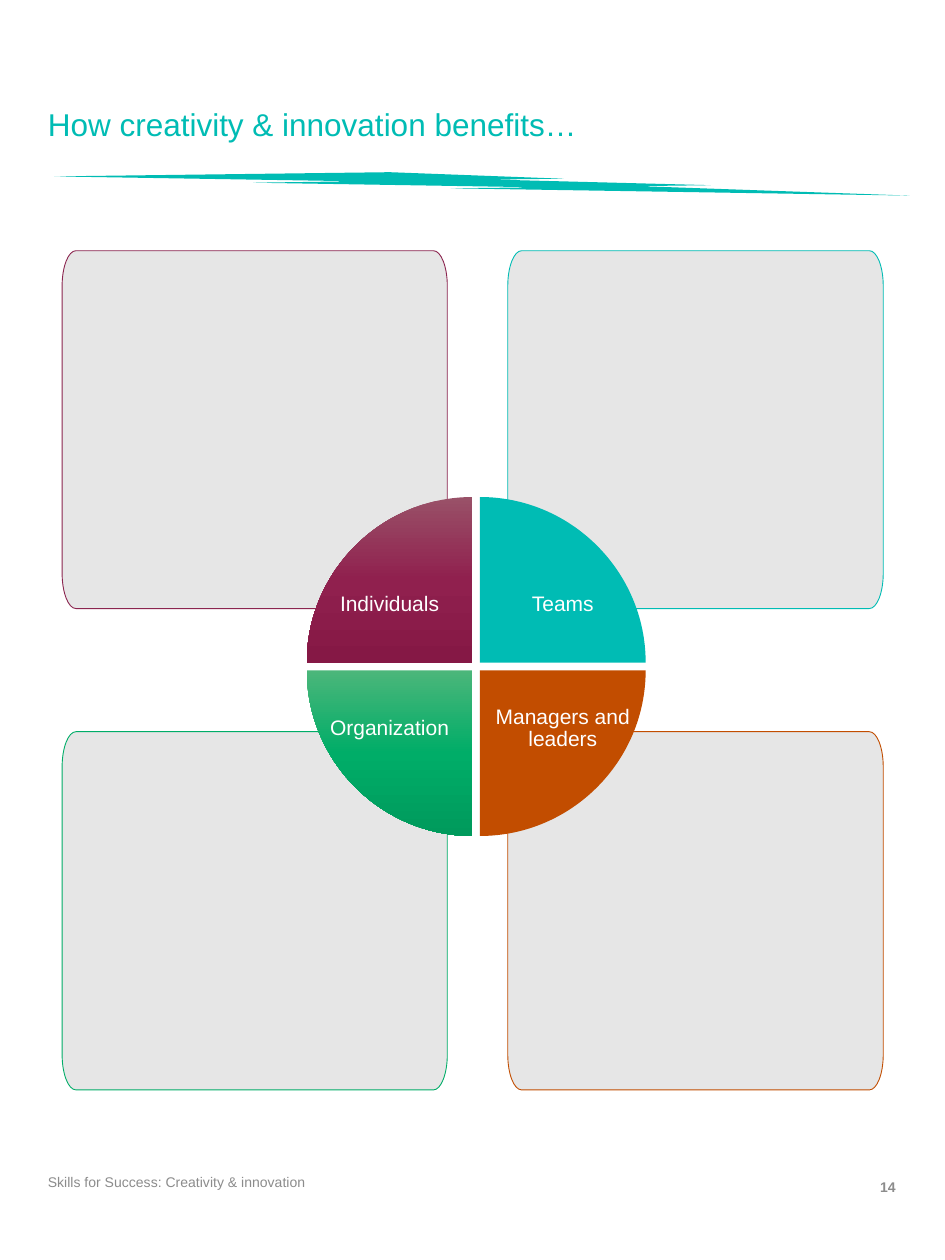
"""Build a slide of four blank panels around a four-part wheel of who benefits from creativity."""
import copy
import math

import pptx
import pptx.dml.color
import pptx.enum.shapes
import pptx.enum.text
import pptx.oxml.ns
import pptx.util

ALIGN = pptx.enum.text.PP_ALIGN
MIDDLE = pptx.enum.text.MSO_ANCHOR.MIDDLE
TEAL, GREY, WHITE = "00BCB4", "8C8C8C", "FFFFFF"


def colour(color_format, value):
    """Set a colour from a hex string."""
    color_format.rgb = pptx.dml.color.RGBColor.from_string(value)


def arc(center_x, center_y, radius_x, radius_y, start):
    """List the four Bezier points of a clockwise quarter ellipse, in grid units."""
    cosine, sine = math.cos(math.radians(start)), math.sin(math.radians(start))
    weights = [(1, 0), (1, 0.55), (0.55, 1), (0, 1)]
    return [(center_x + radius_x * (first * cosine - last * sine),
             center_y + radius_y * (first * sine + last * cosine)) for first, last in weights]


presentation = pptx.Presentation()
presentation.slide_width = pptx.util.Inches(7.5)
presentation.slide_height = pptx.util.Inches(10)
column = presentation.slide_width / 75
row = presentation.slide_height / 100
slide = presentation.slides.add_slide(presentation.slide_layouts[5])

bolt = slide.shapes.add_shape(
    pptx.enum.shapes.MSO_SHAPE.LIGHTNING_BOLT,
    int(4.3 * column), int(13.67 * row), int(67.9 * column), int(1.86 * row))
bolt.shadow.inherit = False
bolt.fill.solid()
colour(bolt.fill.fore_color, TEAL)
bolt.line.fill.background()

left_panel, right_panel = (4.93, 35.5), (40.3, 70.1)
top_panel, bottom_panel = (19.9, 48.3), (58.07, 86.5)
left_hub, right_hub, top_hub, bottom_hub = 37.5, 38.1, 52.6, 53.2
quarters = [
    ("Individuals", left_panel, top_panel, left_hub, top_hub, 180, "8B254F",
     ["995168", "90204E", "851845"]),
    ("Teams", right_panel, top_panel, right_hub, top_hub, 270, TEAL, [TEAL]),
    ("Managers and leaders", right_panel, bottom_panel, right_hub, bottom_hub, 0, "C24D00",
     ["C24D00"]),
    ("Organization", left_panel, bottom_panel, left_hub, bottom_hub, 90, "00AD68",
     ["4BB67A", "00AD68", "009A5C"]),
]

outlines = []
for label, (left, right), (top, bottom), hub_x, hub_y, start, edge, fills in quarters:
    corners = [(left + 1.1, top + 2.8, 180), (right - 1.1, top + 2.8, 270),
               (right - 1.1, bottom - 2.8, 0), (left + 1.1, bottom - 2.8, 90)]
    points = [point for x, y, angle in corners for point in arc(x, y, 1.1, 2.8, angle)]
    outlines.append((points, None, ["E4E4E4"], edge, None))
for label, across, down, hub_x, hub_y, start, edge, fills in quarters:
    points = arc(hub_x, hub_y, 13.15, 13.15, start) + [(hub_x, hub_y)]
    insets = (5.3, 1.4) if hub_y == top_hub else (1.4, 5.3)
    outlines.append((points, label, fills, None, insets))

texts = []
for points, label, fills, edge, insets in outlines:
    places = [(x * column, y * row) for x, y in points]
    builder = slide.shapes.build_freeform(*places[0])
    builder.add_line_segments(places[1:], close=True)
    shape = builder.convert_to_shape()
    shape.shadow.inherit = False
    outline = shape._element.spPr.find(".//" + pptx.oxml.ns.qn("a:pathLst"))[0]
    segments = list(outline)
    for index in range(1, len(points) - 2, 4):
        curve = outline.makeelement(pptx.oxml.ns.qn("a:cubicBezTo"), {})
        segments[index].addprevious(curve)
        for segment in segments[index:index + 3]:
            curve.append(segment[0])
            outline.remove(segment)
    if len(fills) > 1:
        shape.fill.gradient()
        shape.fill.gradient_angle = 270
        stop_list = shape._element.spPr.find(".//" + pptx.oxml.ns.qn("a:gsLst"))
        stop_list.append(copy.deepcopy(stop_list[0]))
        for index, stop in enumerate(shape.fill.gradient_stops):
            stop.position = index / 2
            colour(stop.color, fills[index])
    else:
        shape.fill.solid()
        colour(shape.fill.fore_color, fills[0])
    if edge:
        colour(shape.line.color, edge)
        shape.line.width = pptx.util.Pt(0.5)
        solid = shape._element.spPr.find(pptx.oxml.ns.qn("a:solidFill"))
        alpha = solid[0].makeelement(pptx.oxml.ns.qn("a:alpha"), {"val": "90000"})
        solid[0].append(alpha)
    else:
        shape.line.fill.background()
        texts.append((shape, label, insets, ALIGN.CENTER, 0.9, 12, WHITE, False))

title = slide.shapes.title
footer = slide.shapes.add_textbox(0, 0, 0, 0)
number = slide.shapes.add_textbox(0, 0, 0, 0)
boxes = [(title, 3.8, 5.3, 67.4, 9.4), (footer, 3.8, 92, 25.3, 3.6), (number, 63.3, 92.7, 7.8, 3)]
for shape, left, top, width, height in boxes:
    place = {"left": left * column, "top": top * row,
             "width": width * column, "height": height * row}
    for name, value in place.items():
        setattr(shape, name, int(value))

texts += [
    (title, "How creativity & innovation benefits…", (0, 0), ALIGN.LEFT, 0.9, 18, TEAL, False),
    (footer, "Skills for Success: Creativity & innovation", (0.5, 0.5), ALIGN.LEFT, 1, 8, GREY,
     False),
    (number, "14", (0.5, 0.5), ALIGN.RIGHT, 1, 8, GREY, True),
]
for shape, text, (inset_top, inset_bottom), alignment, spacing, size, value, bold in texts:
    frame = shape.text_frame
    frame.text = text
    paragraph = frame.paragraphs[0]
    font = paragraph.runs[0].font
    formats = [
        (frame, {"word_wrap": True, "vertical_anchor": MIDDLE,
                 "auto_size": pptx.enum.text.MSO_AUTO_SIZE.NONE,
                 "margin_left": 0, "margin_right": 0,
                 "margin_top": int(inset_top * row), "margin_bottom": int(inset_bottom * row)}),
        (paragraph, {"alignment": alignment, "line_spacing": spacing}),
        (font, {"name": "Arial", "size": pptx.util.Pt(size), "bold": bold}),
    ]
    for target, settings in formats:
        for name, setting in settings.items():
            setattr(target, name, setting)
    colour(font.color, value)

presentation.save("out.pptx")
